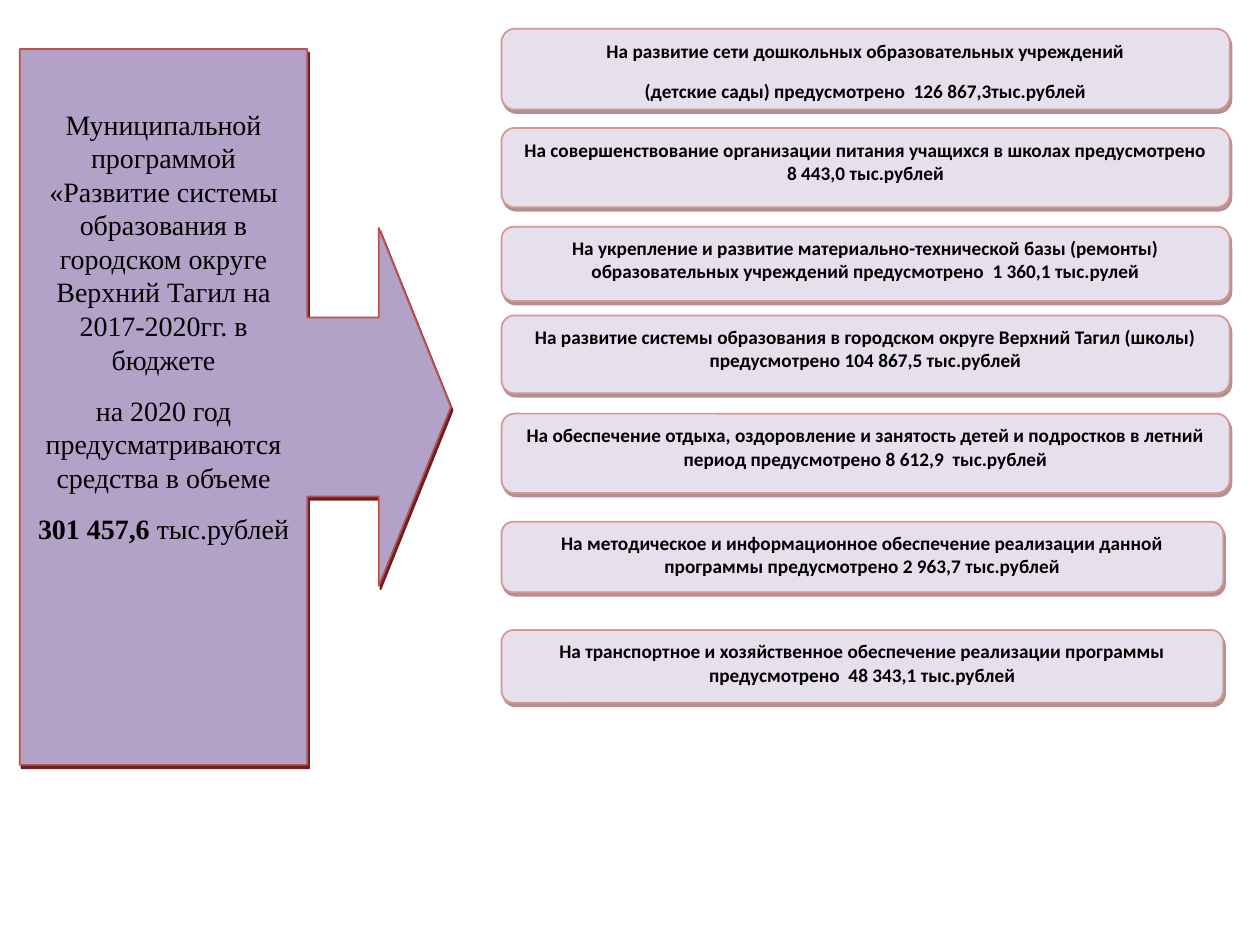
import pptx
import pptx.util
import pptx.dml.color
import pptx.enum.shapes
import pptx.enum.text
import lxml.etree
from pptx.oxml.ns import qn

Cm, Pt = pptx.util.Cm, pptx.util.Pt
SHAPE = pptx.enum.shapes.MSO_SHAPE
COLORS = {
    "arrow": "B3A2C7", "arrow_line": "C0504D",
    "item": "E6E0EC", "item_line": "D99594",
    "shadow": "622423", "text": "000000",
}


def rgb(name):
    return pptx.dml.color.RGBColor.from_string(COLORS[name])


def add_block(kind, box, color, shadow_opacity, paragraphs, font_name, size):
    """Add a shadowed shape; paragraphs are lists of (text, bold) runs."""
    block = slide.shapes.add_shape(kind, *(Cm(length) for length in box))
    block.fill.solid()
    block.fill.fore_color.rgb = rgb(color)
    block.line.color.rgb = rgb(color + "_line")
    block.line.width = Pt(1)

    block.shadow.inherit = False
    effects = block._element.spPr.find(qn("a:effectLst"))
    shadow = lxml.etree.SubElement(effects, qn("a:outerShdw"), dist=str(Pt(2.2)),
                                   dir=str(63 * 60000), algn="ctr", rotWithShape="0")
    tint = lxml.etree.SubElement(shadow, qn("a:srgbClr"), val=COLORS["shadow"])
    lxml.etree.SubElement(tint, qn("a:alpha"), val=str(shadow_opacity * 1000))

    frame = block.text_frame
    frame.word_wrap = True
    frame.vertical_anchor = pptx.enum.text.MSO_ANCHOR.TOP
    for number, runs in enumerate(paragraphs):
        paragraph = frame.add_paragraph() if number else frame.paragraphs[0]
        paragraph.alignment = pptx.enum.text.PP_ALIGN.CENTER
        paragraph.space_after = Pt(10)
        for text, bold in runs:
            run = paragraph.add_run()
            run.text = text
            run.font.name = font_name
            run.font.size = Pt(size)
            run.font.bold = bold
            run.font.color.rgb = rgb("text")
    return block


deck = pptx.Presentation()
deck.slide_width, deck.slide_height = Cm(25.4), Cm(19.05)
slide = deck.slides.add_slide(deck.slide_layouts[6])

program = [
    [("Муниципальной программой «Развитие системы образования в городском округе "
      "Верхний Тагил на 2017-2020гг. в бюджете", False)],
    [("на 2020 год предусматриваются средства в объеме", False)],
    [("301 457,6 ", True), ("тыс.рублей", False)],
]
callout = add_block(SHAPE.RIGHT_ARROW_CALLOUT, (0.4, 0.99, 8.69, 14.43), "arrow", 100,
                    program, "Times New Roman", 16)
for index, ratio in enumerate((0.415, 0.415, 0.167, 0.667)):
    callout.adjustments[index] = ratio
callout.text_frame.margin_top = Cm(1.17)

# Top, width, height and paragraphs of each spending item
items = [
    (0.58, 14.68, 1.63, ["На развитие сети дошкольных образовательных учреждений",
                         "(детские сады) предусмотрено  126 867,3тыс.рублей"]),
    (2.58, 14.68, 1.6, ["На совершенствование организации питания учащихся в школах "
                        "предусмотрено 8 443,0 тыс.рублей"]),
    (4.57, 14.68, 1.5, ["На укрепление и развитие материально-технической базы (ремонты) "
                        "образовательных учреждений предусмотрено  1 360,1 тыс.рулей"]),
    (6.36, 14.68, 1.57, ["На развитие системы образования в городском округе Верхний Тагил "
                         "(школы) предусмотрено 104 867,5 тыс.рублей"]),
    (8.34, 14.68, 1.6, ["На обеспечение отдыха, оздоровление и занятость детей и подростков "
                        "в летний период предусмотрено 8 612,9  тыс.рублей"]),
    (10.52, 14.55, 1.42, ["На методическое и информационное обеспечение реализации данной "
                          "программы предусмотрено 2 963,7 тыс.рублей"]),
    (12.7, 14.55, 1.47, ["На транспортное и хозяйственное обеспечение реализации программы "
                         "предусмотрено  48 343,1 тыс.рублей"]),
]
for top, width, height, lines in items:
    add_block(SHAPE.ROUNDED_RECTANGLE, (10.11, top, width, height), "item", 50,
              [[(line, True)] for line in lines], "Calibri", 11)

deck.save("out.pptx")
